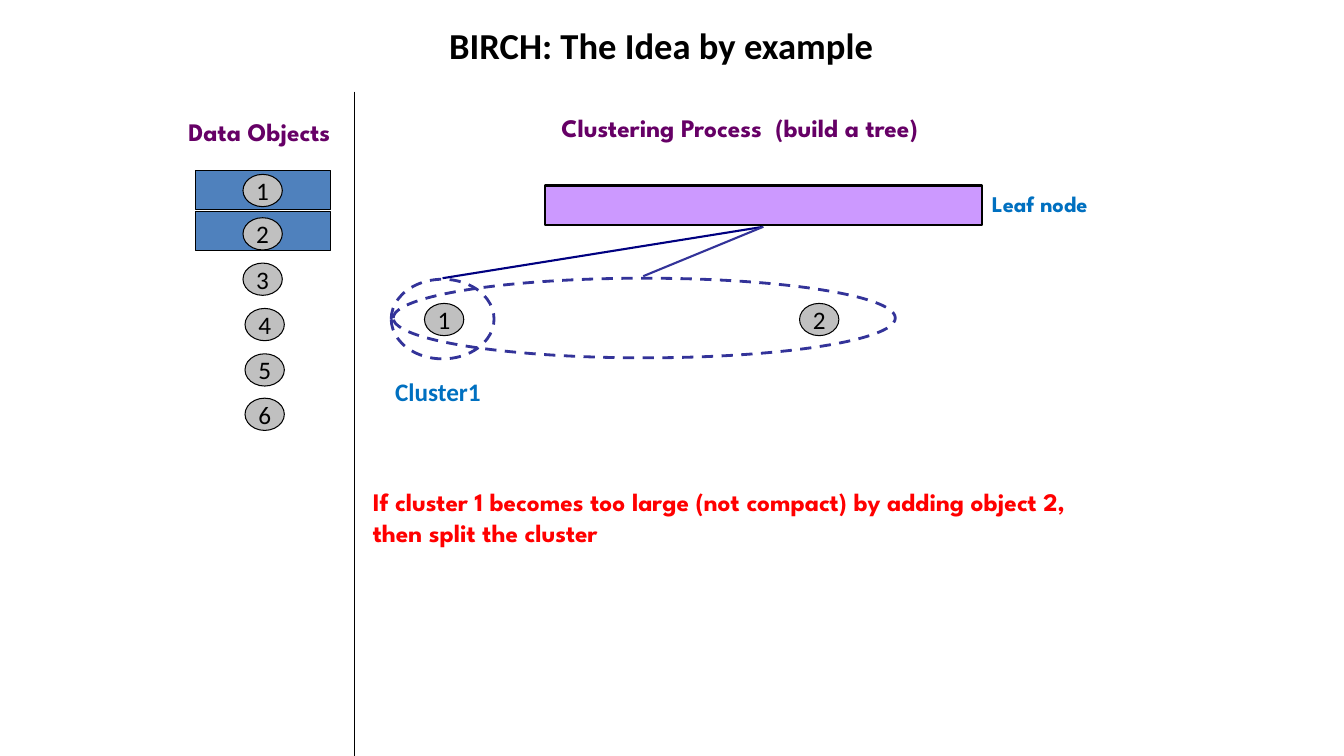
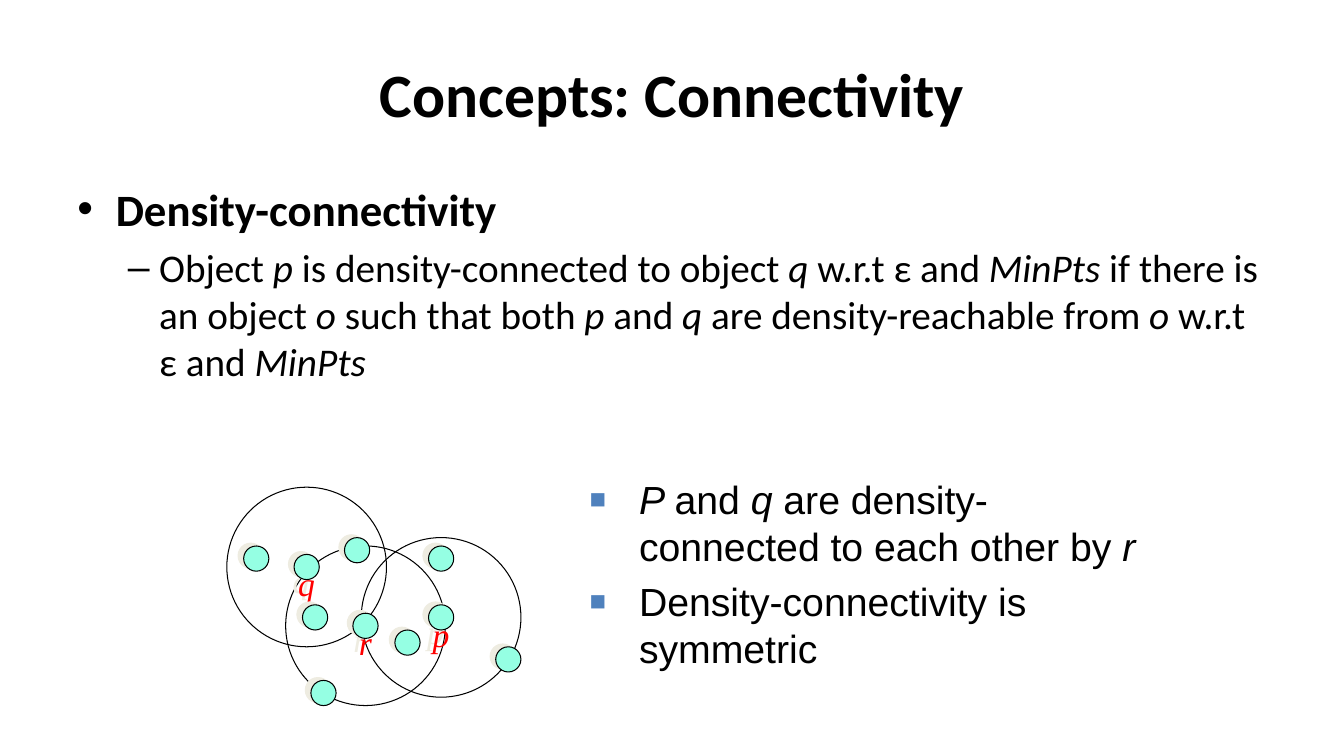
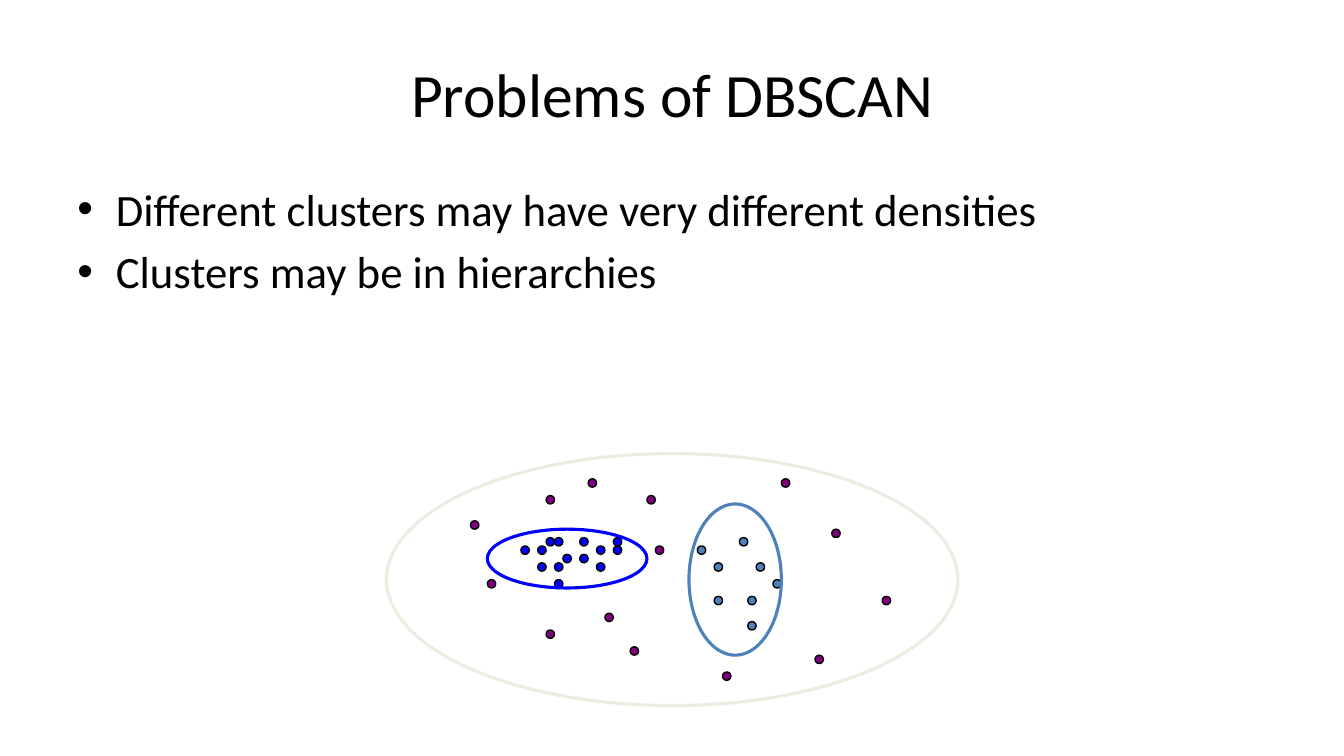
from dataclasses import dataclass
from typing import Any

import lxml.etree
import pptx
import pptx.dml.color
import pptx.enum.dml
import pptx.enum.shapes
import pptx.enum.text
import pptx.oxml
import pptx.oxml.ns
import pptx.util

Inches = pptx.util.Inches
Pt = pptx.util.Pt
ALIGN = pptx.enum.text.PP_ALIGN
ANCHOR = pptx.enum.text.MSO_ANCHOR
FIT = pptx.enum.text.MSO_AUTO_SIZE
KIND = pptx.enum.shapes.MSO_SHAPE

COLORS = {
    "black": "000000", "plum": "660066", "steel": "4F81BD", "gray": "C0C0C0",
    "lilac": "CC99FF", "indigo": "333399", "navy": "000080", "sky": "0070C0",
    "red": "FF0000", "mint": "95FFE3", "sand": "EEECE1", "blue": "0000FF",
    "purple": "800080",
}
CELL = 1 / 12


@dataclass(frozen=True)
class Box:
    left: float
    top: float
    width: float
    height: float

    def place(self) -> tuple:
        return tuple(Inches(n) for n in (self.left, self.top, self.width, self.height))


@dataclass(frozen=True)
class Font:
    size: float
    name: str = "Calibri"
    color: str = "black"
    bold: bool = False


@dataclass(frozen=True)
class Look:
    fill: str = ""
    line: str = "black"
    width: float = 0.75
    dash: bool = False


@dataclass(frozen=True)
class Item:
    text: str
    font: Font
    margin: float
    hang: float
    mark: str
    level: int = 0
    tint: str = "black"
    scale: int = 100


@dataclass(frozen=True)
class Label:
    text: str
    box: Box
    font: Font


@dataclass(frozen=True)
class Link:
    start: tuple[float, float]
    end: tuple[float, float]
    color: str
    width: float


def rgb(name: str) -> pptx.dml.color.RGBColor:
    return pptx.dml.color.RGBColor.from_string(COLORS[name])


def style(para: Any, font: Font) -> None:
    for run in para.runs:
        run.font.size = Pt(font.size)
        run.font.name = font.name
        run.font.bold = font.bold
        run.font.color.rgb = rgb(font.color)


def start(deck: Any, text: str, box: Box, font: Font) -> Any:
    slide = deck.slides.add_slide(deck.slide_layouts[5])
    title = slide.shapes.title
    title.left, title.top, title.width, title.height = box.place()
    frame = title.text_frame
    frame.text = text
    frame.auto_size = FIT.NONE
    frame.vertical_anchor = ANCHOR.MIDDLE
    frame.paragraphs[0].alignment = ALIGN.CENTER
    style(frame.paragraphs[0], font)
    return slide


def draw(shapes: Any, kind: Any, box: Box, look: Look) -> Any:
    shape = shapes.add_shape(kind, *box.place())
    shape.shadow.inherit = False
    if look.fill:
        shape.fill.solid()
        shape.fill.fore_color.rgb = rgb(look.fill)
    else:
        shape.fill.background()
    shape.line.color.rgb = rgb(look.line)
    shape.line.width = Pt(look.width)
    if look.dash:
        shape.line.dash_style = pptx.enum.dml.MSO_LINE.DASH
    return shape


def mark(shape: Any, text: str, font: Font, anchor: Any, slant: bool = False) -> None:
    frame = shape.text_frame
    frame.text = text
    frame.word_wrap = False
    frame.vertical_anchor = anchor
    para = frame.paragraphs[0]
    para.alignment = ALIGN.CENTER
    style(para, font)
    para.runs[0].font.italic = slant


def write(shapes: Any, label: Label) -> None:
    frame = shapes.add_textbox(*label.box.place()).text_frame
    frame.text = label.text
    frame.word_wrap = False
    frame.auto_size = FIT.SHAPE_TO_FIT_TEXT
    for para in frame.paragraphs:
        style(para, label.font)


def connect(shapes: Any, link: Link) -> None:
    ends = [Inches(n) for n in link.start + link.end]
    line = shapes.add_connector(pptx.enum.shapes.MSO_CONNECTOR.STRAIGHT, *ends)
    line.line.color.rgb = rgb(link.color)
    line.line.width = Pt(link.width)
    lxml.etree.SubElement(line.element.spPr, pptx.oxml.ns.qn("a:effectLst"))


def bullet(para: Any, item: Item) -> None:
    props = para._p.get_or_add_pPr()
    props.set("marL", str(Inches(item.margin)))
    props.set("indent", str(Inches(-item.hang)))
    space = pptx.oxml.ns.nsdecls("a")
    for part in (
        f'<a:buClr {space}><a:srgbClr val="{COLORS[item.tint]}"/></a:buClr>',
        f'<a:buSzPct {space} val="{item.scale * 1000}"/>',
        f'<a:buFont {space} typeface="Arial"/>',
        f'<a:buChar {space} char="{item.mark}"/>',
    ):
        props.append(pptx.oxml.parse_xml(part))


def outline(shapes: Any, box: Box, items: list[Item]) -> None:
    frame = shapes.add_textbox(*box.place()).text_frame
    frame.word_wrap = True
    for num, item in enumerate(items):
        para = frame.add_paragraph() if num else frame.paragraphs[0]
        para.level = item.level
        para.space_before = Pt(item.font.size * 0.2)
        for turn, piece in enumerate(item.text.split("*")):
            if piece:
                run = para.add_run()
                run.text = piece
                run.font.italic = turn % 2 == 1
        style(para, item.font)
        bullet(para, item)


def shade(shape: Any) -> None:
    effects = shape.element.spPr.find(pptx.oxml.ns.qn("a:effectLst"))
    effects.append(pptx.oxml.parse_xml(
        f'<a:outerShdw {pptx.oxml.ns.nsdecls("a")} blurRad="0" dist="{Pt(4.5)}" '
        f'dir="{207 * 60000}" algn="ctr" rotWithShape="0">'
        f'<a:srgbClr val="{COLORS["sand"]}"/></a:outerShdw>'))


def grid(col: int, row: int, cols: int, rows: int) -> Box:
    return Box(col * CELL, row * CELL, cols * CELL, rows * CELL)


HEAD = Box(0.67, 0.3, 12, 1.25)
BODY = Box(0.67, 1.75, 12, 4.95)
LARGE = Font(32)


def birch(deck: Any) -> None:
    shapes = start(deck, "BIRCH: The Idea by example", Box(2.06, 0.17, 9, 0.55),
                   Font(26.1, bold=True)).shapes
    head = Font(18, "League Spartan", "plum", True)
    labels = [
        Label("Data Objects", Box(1.77, 1.1, 1.79, 0.4), head),
        Label("Clustering Process  (build a tree)", Box(5.47, 1.07, 4.1, 0.4), head),
        Label("Cluster1", Box(3.82, 3.68, 1.06, 0.4), Font(18, color="sky", bold=True)),
        Label("Leaf node", Box(9.74, 1.84, 1.28, 0.37),
              Font(16, "League Spartan", "sky", True)),
        Label("If cluster 1 becomes too large (not compact) by adding object 2,\n"
              "then split the cluster", Box(3.6, 4.78, 8.17, 0.71),
              Font(18, "League Spartan", "red", True)),
    ]
    for label in labels:
        write(shapes, label)
    for top in (1.69, 2.1):
        draw(shapes, KIND.RECTANGLE, Box(1.94, top, 1.34, 0.39), Look("steel"))
    draw(shapes, KIND.RECTANGLE, Box(5.41, 1.84, 4.33, 0.39), Look("lilac", width=1.5))
    for link in (
        Link((3.52, 0.91), (3.52, 7.5), "black", 0.75),
        Link((7.57, 2.25), (4.39, 2.76), "navy", 1.5),
        Link((6.38, 2.74), (7.57, 2.25), "indigo", 1.5),
    ):
        connect(shapes, link)
    balls = [("1", 2.41, 1.73), ("2", 2.41, 2.16), ("3", 2.41, 2.61),
             ("4", 2.43, 3.06), ("5", 2.43, 3.51), ("6", 2.43, 3.95),
             ("1", 4.21, 3.01), ("2", 7.93, 3.01)]
    for text, left, top in balls:
        ball = draw(shapes, KIND.OVAL, Box(left, top, 0.39, 0.32), Look("gray"))
        mark(ball, text, Font(18), ANCHOR.MIDDLE)
    for box in (Box(3.88, 2.77, 1.02, 0.79), Box(3.9, 2.76, 4.98, 0.79)):
        draw(shapes, KIND.OVAL, box, Look(line="indigo", width=2, dash=True))


def density(deck: Any) -> None:
    shapes = start(deck, "Concepts: Connectivity", HEAD, Font(44, bold=True)).shapes
    outline(shapes, BODY, [
        Item("Density-connectivity", Font(32, bold=True), 0.38, 0.38, "•"),
        Item("Object *p* is density-connected to object *q* w.r.t ε and *MinPts* if "
             "there is an object *o* such that both *p* and *q* are "
             "density-reachable from *o* w.r.t ε and *MinPts*",
             Font(28), 0.81, 0.31, "–", 1),
    ])
    for col, row in ((34, 65), (43, 64), (27, 58)):
        draw(shapes, KIND.OVAL, grid(col, row, 19, 19), Look())
    dots = [(51, 65, ""), (47, 75, ""), (59, 77, ""), (51, 72, "p"), (41, 64, ""),
            (37, 81, ""), (35, 66, "q"), (42, 73, "r"), (36, 72, ""), (29, 65, "")]
    for col, row, text in dots:
        dot = draw(shapes, KIND.OVAL, grid(col, row, 3, 3), Look("mint"))
        shade(dot)
        if text:
            mark(dot, text, Font(24, "Times New Roman", "red"), ANCHOR.TOP, True)
    notes = ("*P *and* q* are density-connected to each other by *r*",
             "Density-connectivity is symmetric")
    outline(shapes, Box(5.75, 4.67, 5.67, 1.25), [
        Item(text, Font(28, "Arial"), 0.49, 0.49, "■", tint="steel", scale=70)
        for text in notes])


def limits(deck: Any) -> None:
    slide = start(deck, "Problems of DBSCAN", HEAD, Font(44))
    outline(slide.shapes, BODY, [
        Item(text, LARGE, 0.38, 0.38, "•")
        for text in ("Different clusters may have very different densities",
                     "Clusters may be in hierarchies")])
    shapes = slide.shapes.add_group_shape().shapes
    dots = {
        "blue": [(62, 65), (64, 67), (66, 64), (67, 66), (69, 64), (64, 65), (69, 66),
                 (66, 67), (65, 64), (66, 69), (73, 64), (71, 65), (73, 65), (71, 67)],
        "steel": [(83, 65), (85, 67), (90, 67), (85, 71), (89, 71), (92, 69), (89, 74),
                  (88, 64)],
        "purple": [(77, 59), (78, 65), (65, 59), (56, 62), (58, 69), (72, 73), (93, 57),
                   (86, 80), (65, 75), (99, 63), (75, 77), (70, 57), (97, 78), (105, 71)],
    }
    for color, spots in dots.items():
        for col, row in spots:
            draw(shapes, KIND.OVAL, grid(col, row, 1, 1), Look(color, width=1))
    rings = {"blue": (58, 63, 19, 7), "steel": (82, 60, 11, 18), "sand": (46, 54, 68, 30)}
    for color, cells in rings.items():
        draw(shapes, KIND.OVAL, grid(*cells), Look(line=color, width=2.25))


def main() -> None:
    deck = pptx.Presentation()
    deck.slide_width = Inches(13.33)
    deck.slide_height = Inches(7.5)
    for build in (birch, density, limits):
        build(deck)
    deck.save("out.pptx")


if __name__ == "__main__":
    main()
